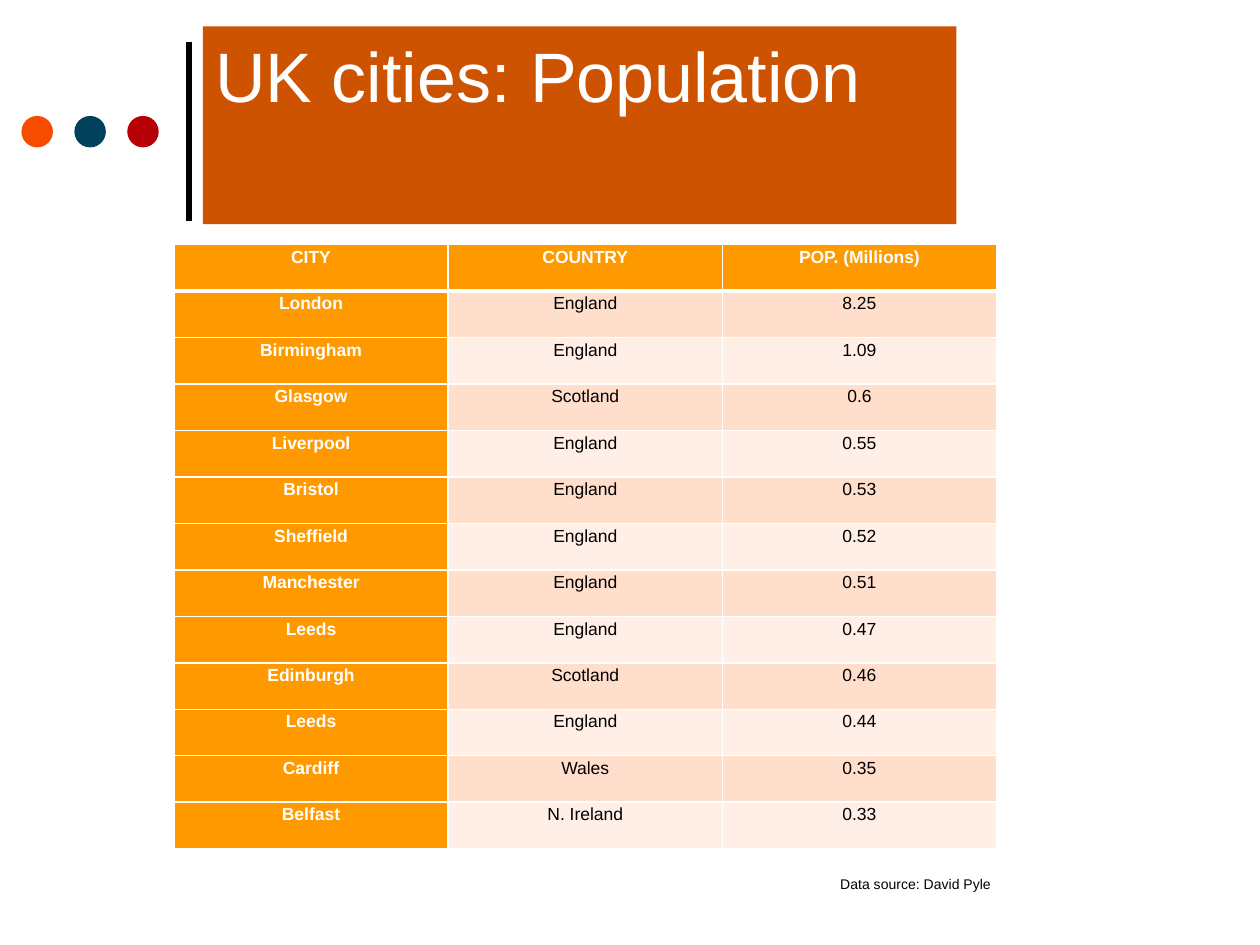
import lxml.etree
import pptx
import pptx.dml.color
import pptx.enum.shapes
import pptx.enum.text
import pptx.oxml.ns
import pptx.util
from pptx.util import Inches

FONT = "Arial"
HEADER = ("CITY", "COUNTRY", "POP. (Millions)")
CITIES = [
    ("London", "England", "8.25"),
    ("Birmingham", "England", "1.09"),
    ("Glasgow", "Scotland", "0.6"),
    ("Liverpool", "England", "0.55"),
    ("Bristol", "England", "0.53"),
    ("Sheffield", "England", "0.52"),
    ("Manchester", "England", "0.51"),
    ("Leeds", "England", "0.47"),
    ("Edinburgh", "Scotland", "0.46"),
    ("Leeds", "England", "0.44"),
    ("Cardiff", "Wales", "0.35"),
    ("Belfast", "N. Ireland", "0.33"),
]
BAND_FILLS = ("FFEFE7", "FFDECC")


def rgb(value):
    return pptx.dml.color.RGBColor.from_string(value)


def set_fill(fill, color):
    fill.solid()
    fill.fore_color.rgb = rgb(color)


def format_runs(p, size, color, bold=False):
    for r in p.runs:
        r.font.name = FONT
        r.font.size = pptx.util.Pt(size)
        r.font.bold = bold
        r.font.color.rgb = rgb(color)


def add_rule(slide, x, top, bottom):
    line = slide.shapes.add_connector(
        pptx.enum.shapes.MSO_CONNECTOR.STRAIGHT,
        Inches(x), Inches(bottom), Inches(x), Inches(top))
    line.line.color.rgb = rgb("000000")
    line.line.width = pptx.util.Pt(3)
    lxml.etree.SubElement(line._element.spPr, pptx.oxml.ns.qn("a:effectLst"))


def add_dot(slide, left, color):
    sp = slide.shapes.add_shape(
        pptx.enum.shapes.MSO_SHAPE.OVAL,
        Inches(left), Inches(0.92), Inches(0.25), Inches(0.25))
    sp.shadow.inherit = False
    set_fill(sp.fill, color)
    sp.line.fill.background()


def set_title(slide, text):
    title = slide.shapes.title
    title.left, title.top = Inches(1.61), Inches(0.21)
    title.width, title.height = Inches(5.98), Inches(1.57)
    set_fill(title.fill, "CE5300")
    tf = title.text_frame
    tf.text = text
    tf.auto_size = pptx.enum.text.MSO_AUTO_SIZE.NONE
    tf.vertical_anchor = pptx.enum.text.MSO_ANCHOR.TOP
    p = tf.paragraphs[0]
    p.alignment = pptx.enum.text.PP_ALIGN.LEFT
    format_runs(p, 40, "FFFFFF")


def set_borders(cell, top, bottom):
    """Draw white borders; top and bottom are widths in points."""
    tc_pr = cell._tc.get_or_add_tcPr()
    for side, width in (("L", 1), ("R", 1), ("T", top), ("B", bottom)):
        ln = lxml.etree.SubElement(
            tc_pr, pptx.oxml.ns.qn("a:ln" + side), w=str(pptx.util.Pt(width)))
        fill = lxml.etree.SubElement(ln, pptx.oxml.ns.qn("a:solidFill"))
        lxml.etree.SubElement(fill, pptx.oxml.ns.qn("a:srgbClr"), val="FFFFFF")


def format_cell(cell, row, col):
    is_heading = row == 0 or col == 0
    set_borders(cell, top=3 if row == 1 else 1, bottom=3 if row == 0 else 1)
    set_fill(cell.fill, "FF9900" if is_heading else BAND_FILLS[row % 2])
    cell.margin_left = cell.margin_right = Inches(0.07)
    cell.margin_top = cell.margin_bottom = 0
    p = cell.text_frame.paragraphs[0]
    p.alignment = pptx.enum.text.PP_ALIGN.CENTER
    p.line_spacing = 1.15
    format_runs(p, 10, "FFFFFF" if is_heading else "000000", is_heading)


def add_city_table(slide):
    rows = [HEADER] + CITIES
    table = slide.shapes.add_table(
        len(rows), len(HEADER),
        Inches(1.38), Inches(1.94), Inches(6.53), Inches(4.8)).table
    for i, values in enumerate(rows):
        for j, value in enumerate(values):
            cell = table.cell(i, j)
            cell.text = value
            format_cell(cell, i, j)


def add_source_note(slide, text):
    box = slide.shapes.add_textbox(
        Inches(6.57), Inches(6.9), Inches(1.41), Inches(0.24))
    tf = box.text_frame
    tf.text = text
    tf.word_wrap = False
    tf.auto_size = pptx.enum.text.MSO_AUTO_SIZE.SHAPE_TO_FIT_TEXT
    format_runs(tf.paragraphs[0], 8, "000000")


def main():
    prs = pptx.Presentation()
    prs.slide_width, prs.slide_height = Inches(10), Inches(7.5)
    slide = prs.slides.add_slide(prs.slide_layouts[5])
    add_rule(slide, 1.5, 0.33, 1.75)
    for i, color in enumerate(("F54C00", "01415B", "B70005")):
        add_dot(slide, 0.17 + 0.42 * i, color)
    set_title(slide, "UK cities: Population")
    add_city_table(slide)
    add_source_note(slide, "Data source: David Pyle")
    prs.save("out.pptx")


if __name__ == "__main__":
    main()
